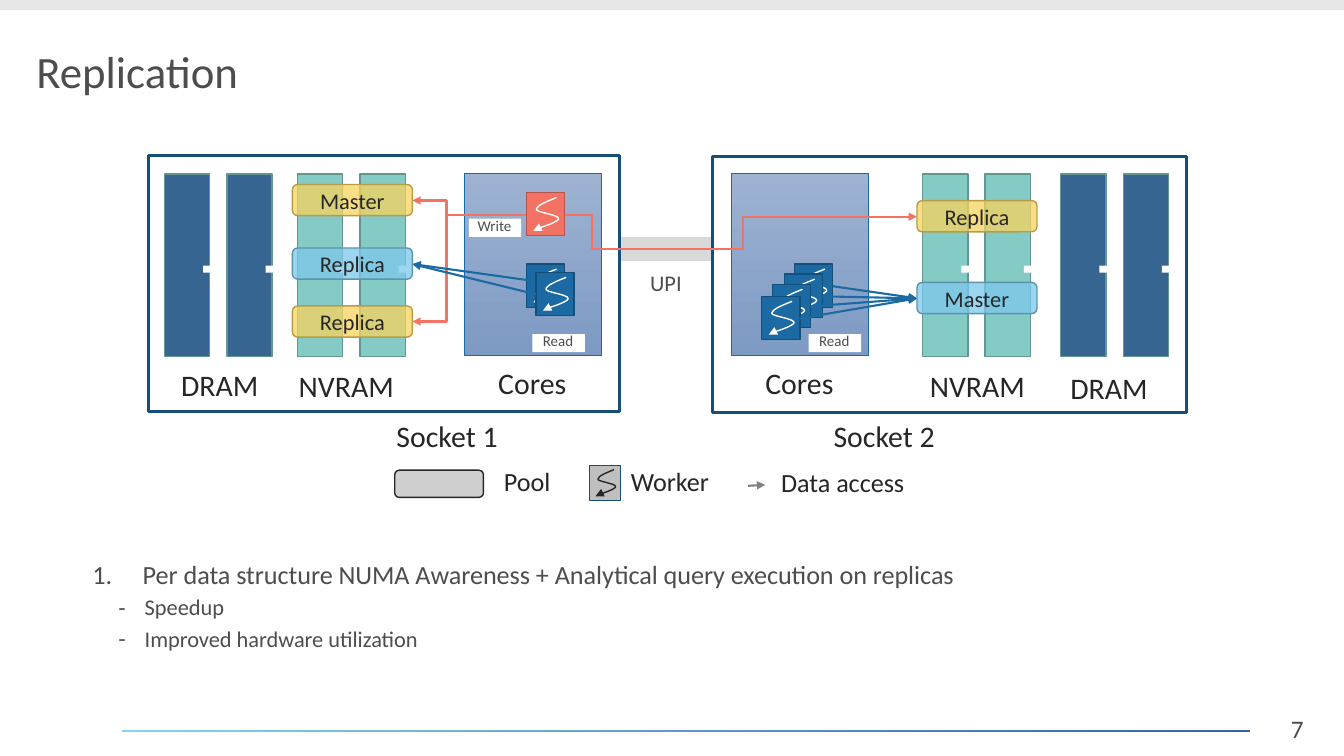
from dataclasses import dataclass
from lxml.etree import SubElement
from pptx import Presentation
from pptx.dml.color import RGBColor
from pptx.enum.shapes import MSO_CONNECTOR, MSO_SHAPE
from pptx.enum.text import MSO_ANCHOR, MSO_AUTO_SIZE, PP_ALIGN
from pptx.oxml.ns import qn
from pptx.util import Inches, Pt


@dataclass(frozen=True)
class Theme:
    font: str = "Calibri"
    gray: str = "4C4D4D"
    ink: str = "262626"
    white: str = "FFFFFF"
    navy: str = "144E79"
    blue: str = "1B6AA3"
    red: str = "F47264"
    rust: str = "B5544A"
    dram: str = "376591"
    nvram: str = "84CBC5"
    edge: str = "629692"
    silver: str = "BFBFBF"
    head: float = 32
    label: float = 21.33
    key: float = 18.67
    page: float = 18
    small: float = 16
    tiny: float = 10.67


T = Theme()
GOLD, SKY, PALE = ("F8D35E", "B79C46"), ("7CC8EC", "5C94AF"), (T.silver, T.ink)
CELL = 0.1  # grid cell in inches; all places below are columns and rows

# Content
TITLE = "Replication"
POINTS = [
    (0, "Per data structure NUMA Awareness + Analytical query execution on replicas"),
    (1, "Speedup"),
    (1, "Improved hardware utilization"),
]
SOCKETS = [(14.75, 15.45, 46.7), (70.65, 15.55, 47)]
CORES = [46.05, 72.5]
BANKS = [(16.3, T.dram), (29.5, T.nvram), (91.5, T.nvram), (105.2, T.dram)]
POOLS = [
    ("Master", 29, 18.3, GOLD), ("Replica", 29, 24.6, SKY),
    ("Replica", 29, 30.35, GOLD), ("Replica", 90.95, 19.9, GOLD),
    ("Master", 90.95, 28.02, SKY),
]
LABELS = [  # text, column, row, width, size, colour
    ("Socket 1", 27.3, 40.95, 34.1, T.label, T.ink),
    ("Socket 2", 70.65, 40.9, 34.1, T.label, T.ink),
    ("DRAM", 13.5, 35.9, 16.6, T.label, T.ink),
    ("NVRAM", 26.05, 35.95, 16.6, T.label, T.ink),
    ("Cores", 46, 35.7, 13.6, T.label, T.ink),
    ("Cores", 72.5, 35.7, 13.6, T.label, T.ink),
    ("NVRAM", 88.65, 35.95, 16.6, T.label, T.ink),
    ("DRAM", 101.7, 36.15, 16.6, T.label, T.ink),
    ("UPI", 62.55, 26.2, 7, T.small, T.gray),
    ("7", 124.7, 70.3, 7.9, T.page, T.gray),
]
KEYS = [("Pool", 49, 45.7, 13.2), ("Worker", 61.6, 45.7, 12.4),
        ("Data access", 76.5, 45.8, 18.2)]
TAGS = [("Write", 46.5, 21.7), ("Read", 52.8, 33.15), ("Read", 80.2, 33.15)]
READS = [  # worker column, row, arrow on it, link start, link end
    (52.2, 26.2, True, (56, 28.3), (40.9, 26.2)),
    (53.15, 27.02, True, (53.15, 29.2), (40.9, 26.2)),
    (78.8, 26.2, False, (82.6, 28.4), (90.95, 29.6)),
    (77.8, 27.2, False, (81.6, 29.4), (90.95, 29.6)),
    (76.6, 28.2, False, (80.4, 30.4), (90.95, 29.6)),
    (75.55, 29.4, True, (79.3, 31.6), (90.95, 29.6)),
]
WRITES = [  # start, end, share of width before the bend, arrow
    ((52.2, 21.3), (40.9, 19.9), 0.7, True),
    ((52.2, 21.3), (40.9, 31.9), 0.7, True),
    ((56, 21.3), (61.5, 24.7), 0.5, False),
    ((61.5, 24.7), (70.7, 24.7), None, False),
    ((70.7, 24.7), (90.95, 21.5), 0.15, True),
]
WAVE = [(3, .5), (2, .9), (1, 1.3), (1, 1.7), (1.1, 2), (3.2, 2.2),
        (3.2, 2.6), (3.2, 2.9), (1.7, 3.4), (1.3, 3.5)]
TIP = (0.7, 3.8)

deck = Presentation()
deck.slide_width, deck.slide_height = Inches(13.33), Inches(7.5)
slide = deck.slides.add_slide(deck.slide_layouts[1])
shapes = slide.shapes


# Helpers
def grid(*cells):
    return [Inches(c * CELL) for c in cells]


def color(code):
    return RGBColor.from_string(code)


def style(para, size, code, align=PP_ALIGN.CENTER):
    para.alignment = align
    for run in para.runs:
        run.font.name, run.font.size = T.font, Pt(size)
        run.font.color.rgb = color(code)


def box(x, y, w, h, fill=None, line=None, pen=1, kind=MSO_SHAPE.RECTANGLE):
    item = shapes.add_shape(kind, *grid(x, y, w, h))
    item.shadow.inherit = False
    if fill:
        item.fill.solid()
        item.fill.fore_color.rgb = color(fill)
    else:
        item.fill.background()
    if line:
        item.line.color.rgb, item.line.width = color(line), Pt(pen)
    else:
        item.line.fill.background()
    return item


def fade(item, first, last, angle):
    item.fill.gradient()
    item.fill.gradient_angle = angle
    for stop, code in zip(item.fill.gradient_stops, (first, last)):
        stop.color.rgb = color(code)


def label(text, x, y, w, size, code, align=PP_ALIGN.CENTER):
    frame = shapes.add_textbox(*grid(x, y, w, size * 0.17 + 1)).text_frame
    frame.word_wrap = True
    frame.auto_size = MSO_AUTO_SIZE.SHAPE_TO_FIT_TEXT
    frame.text = text
    style(frame.paragraphs[0], size, code, align)


def link(start, end, code, pen=1.5, arrow=True, bend=None):
    kind = MSO_CONNECTOR.ELBOW if bend else MSO_CONNECTOR.STRAIGHT
    item = shapes.add_connector(kind, *grid(*start, *end))
    item.line.color.rgb, item.line.width = color(code), Pt(pen)
    props = item._element.spPr
    if bend:
        SubElement(props.prstGeom.get_or_add_avLst(), qn("a:gd"),
                   name="adj1", fmla=f"val {round(bend * 100000)}")
    if arrow:
        SubElement(item.line._get_or_add_ln(), qn("a:tailEnd"), type="triangle")
    SubElement(props, qn("a:effectLst"))


def pool(x, y, w, h, tones):
    item = box(x, y, w, h, *tones, kind=MSO_SHAPE.ROUNDED_RECTANGLE)
    tone = item._element.spPr.find(qn("a:solidFill"))[0]
    SubElement(tone, qn("a:alpha"), val="75000")
    return item


def bend_path(item):
    """Turn each three line points into one cubic curve."""
    route = next(item._element.iter(qn("a:moveTo"))).getparent()
    legs = route.findall(qn("a:lnTo"))
    for n in range(0, len(legs), 3):
        curve = SubElement(route, qn("a:cubicBezTo"))
        for leg in legs[n:n + 3]:
            curve.append(leg[0])
            route.remove(leg)


def worker(x, y, fill, line, pen=T.white, arrow=True, scale=1.0):
    box(x, y, 3.8 * scale, 4.3 * scale, fill, line)
    knots = [(x + p * scale, y + q * scale) for p, q in WAVE]
    maker = shapes.build_freeform(*grid(*knots[0]))
    maker.add_line_segments([grid(*knot) for knot in knots[1:]], close=False)
    wave = maker.convert_to_shape()
    bend_path(wave)
    wave.shadow.inherit = False
    wave.fill.background()
    wave.line.color.rgb, wave.line.width = color(pen), Pt(1)
    if arrow:
        link(knots[-1], (x + TIP[0] * scale, y + TIP[1] * scale), pen, 0.5)


# Page frame
box(0, 0, 133.3, 1, "E7E6E6")
fade(box(12.1, 72.42, 111.8, 0.2, T.dram), "83D4EE", T.dram, 315)

# Sockets, cores and memory banks
box(61.5, 23.5, 9.2, 2.4, "D9D9D9")
for x, y, w in SOCKETS:
    box(x, y, w, 25.4, None, T.navy, 2.25)
for x in CORES:
    fade(box(x, 17.2, 13.6, 18.05, T.blue, T.blue, 0.5), "9EB3D2", "7D9AC3", 270)
for x, tone in BANKS:
    for left in (x, x + 6.2):
        box(left, 17.25, 4.5, 18.1, tone, T.edge)
        box(left + 3.85, 26.35, 1.3, 0.7, T.white)

# Data access and workers
for start, end, bend, arrow in WRITES:
    link(start, end, T.red, arrow=arrow, bend=bend)
worker(52.2, 19.1, T.red, T.rust)
for x, y, arrow, start, end in READS:
    worker(x, y, T.blue, T.navy, arrow=arrow)
    link(start, end, T.blue)
for text, x, y, tones in POOLS:
    frame = pool(x, y, 11.9, 3.1, tones).text_frame
    frame.text, frame.vertical_anchor = text, MSO_ANCHOR.MIDDLE
    style(frame.paragraphs[0], T.small, T.ink)

# Labels and key
for text, x, y in TAGS:
    box(x, y, 5.2, 1.8, T.white)
    label(text, x - 0.8, y - 0.7, 6.7, T.tiny, T.gray)
for entry in LABELS:
    label(*entry)
pool(39.15, 46.65, 8.8, 2.7, PALE)
worker(58.5, 46.2, T.silver, T.navy, T.ink, scale=0.8)
link((74.2, 48.2), (75.9, 48.1), "808080")
for text, x, y, w in KEYS:
    label(text, x, y, w, T.key, T.ink, PP_ALIGN.LEFT)

# Title and list
title, body = shapes.title, slide.placeholders[1]
for item, spot in ((title, (2.6, 4.2, 94.5, 6.3)), (body, (5.25, 55.2, 126, 7.4))):
    item.left, item.top, item.width, item.height = grid(*spot)
    item.text_frame.auto_size = MSO_AUTO_SIZE.NONE
title.text_frame.text = TITLE
title.text_frame.vertical_anchor = MSO_ANCHOR.MIDDLE
title.text_frame.paragraphs[0].line_spacing = 0.9
style(title.text_frame.paragraphs[0], T.head, T.gray, PP_ALIGN.LEFT)
frame = body.text_frame
frame.margin_left = 0
frame.text = "\n".join(text for _, text in POINTS)
for n, (para, (level, _)) in enumerate(zip(frame.paragraphs, POINTS)):
    para.level, para.line_spacing, para.space_before = level, 0.9, Pt(5 if n else 0)
    props = para._p.get_or_add_pPr()
    edge, hang = ((0.91, -0.26) if level else (0.89, -0.5))
    props.set("marL", str(Inches(edge)))
    props.set("indent", str(Inches(hang)))
    if level:
        SubElement(props, qn("a:buChar"), char="-")
    else:
        SubElement(props, qn("a:buAutoNum"), type="arabicPeriod")
    style(para, T.small if level else T.key, T.gray, PP_ALIGN.LEFT)

deck.save("out.pptx")
